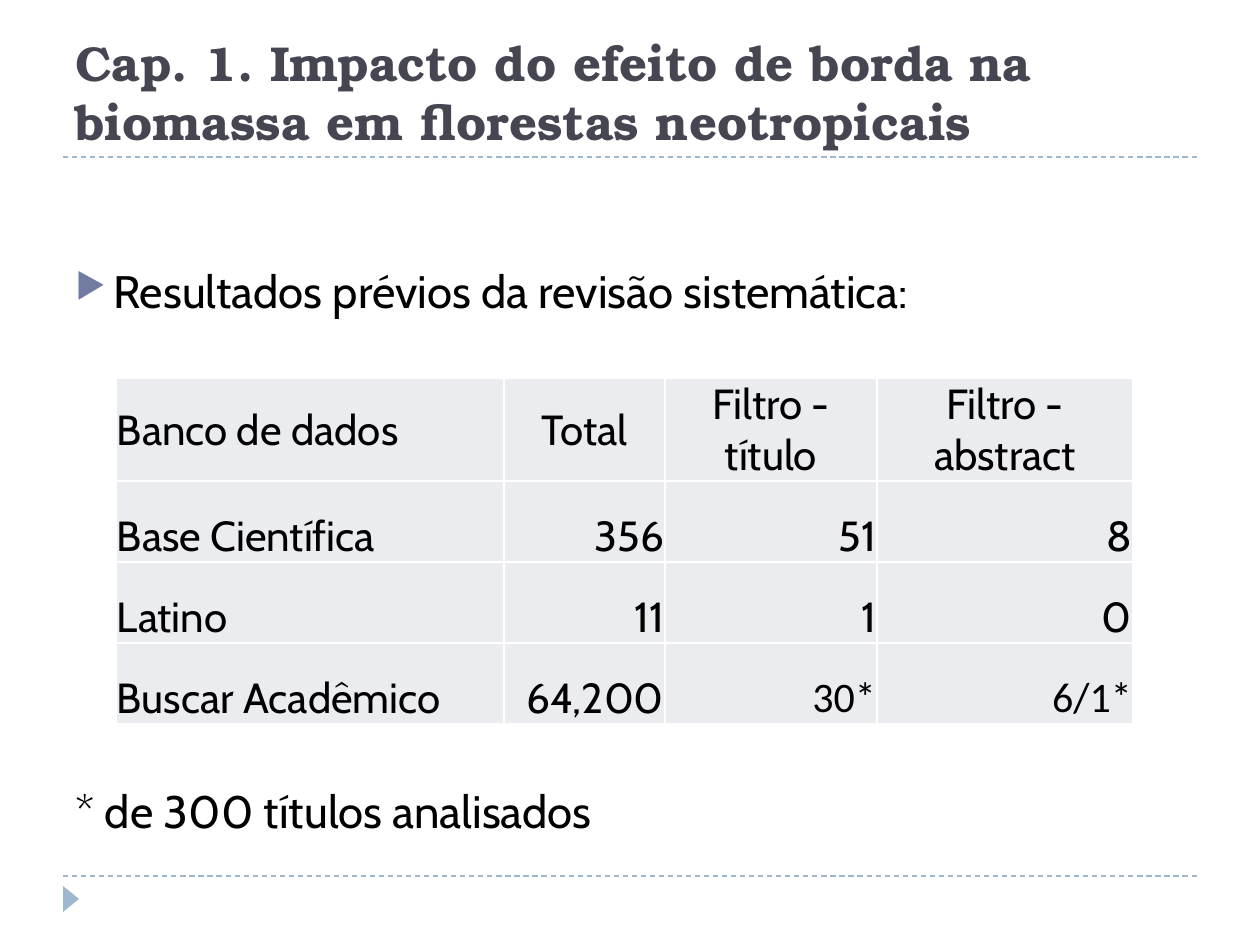
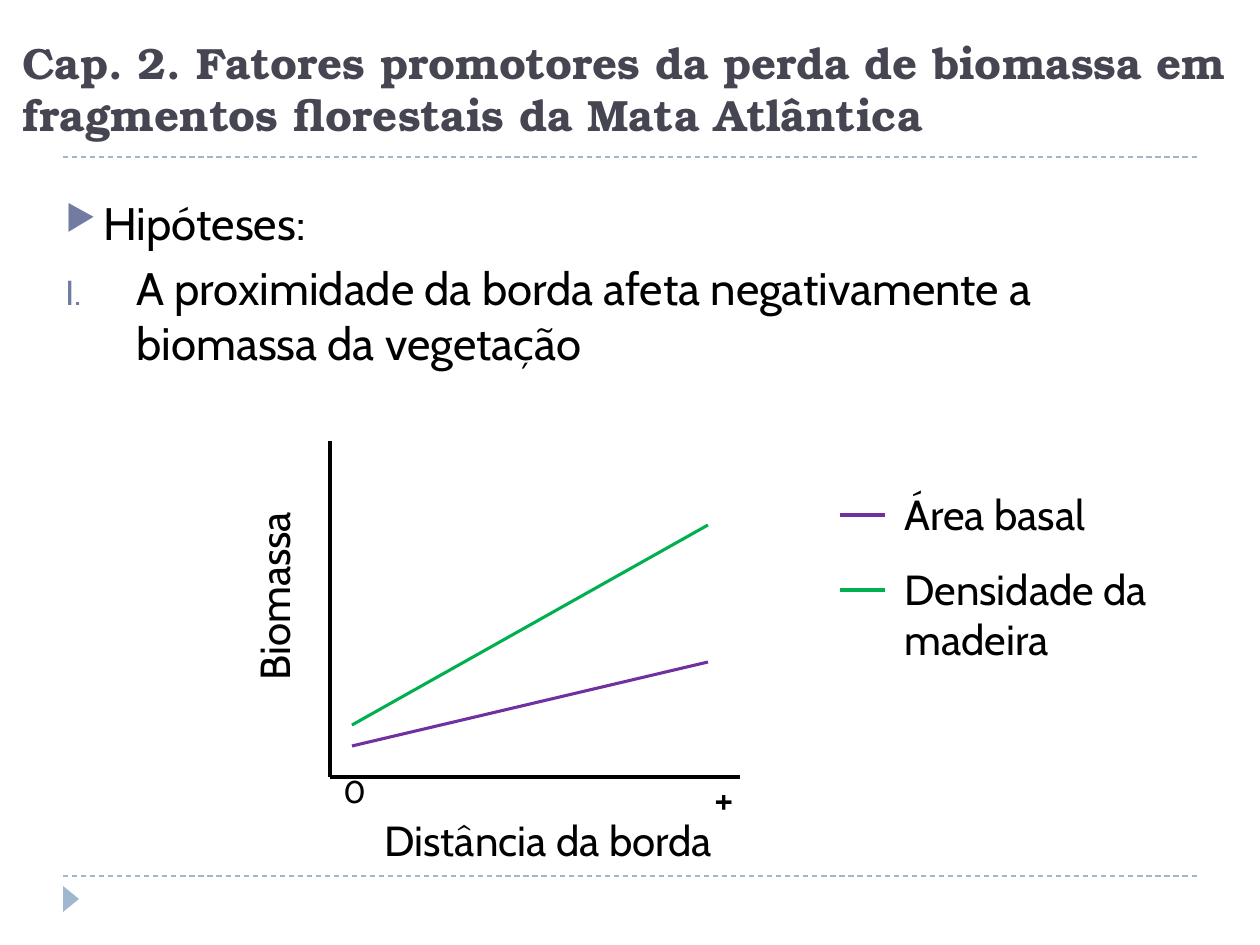
import lxml.etree
import pptx
import pptx.dml.color
import pptx.enum.dml
import pptx.enum.shapes
import pptx.enum.text
import pptx.oxml
import pptx.oxml.ns
import pptx.util

PX_PER_INCH = 126
PAGE_WIDTH, PAGE_HEIGHT = 1260, 945
TITLE_FONT, BODY_FONT, NOTE_FONT = "TeX Gyre Bonum", "Cabin", "Calibri"
INK, TITLE_INK, BULLET, RULE = "000000", "464653", "727CA3", "9FB8CD"
CELL_FILL, WHITE = "EBECF0", "FFFFFF"
GREEN, PURPLE = "00B050", "7030A0"

ALIGN = pptx.enum.text.PP_ALIGN
ANCHOR = pptx.enum.text.MSO_ANCHOR


def px(length):
    return pptx.util.Emu(round(length * 914400 / PX_PER_INCH))


def color(value):
    return pptx.dml.color.RGBColor.from_string(value)


def add_element(parent, tag, **attributes):
    element = lxml.etree.SubElement(parent, pptx.oxml.ns.qn(tag))
    for name, value in attributes.items():
        element.set(name, value)
    return element


def format_runs(para, size, font=BODY_FONT, ink=INK, bold=False):
    for span in para.runs:
        span.font.size = pptx.util.Pt(size)
        span.font.name = font
        span.font.bold = bold
        span.font.color.rgb = color(ink)


def add_line(page, start, end, ink, width=1.75, dashed=False):
    line = page.shapes.add_connector(
        pptx.enum.shapes.MSO_CONNECTOR.STRAIGHT, *map(px, start + end))
    line.line.color.rgb = color(ink)
    line.line.width = pptx.util.Pt(width)
    if dashed:
        line.line.dash_style = pptx.enum.dml.MSO_LINE.DASH
    add_element(line._element.spPr, "a:effectLst")


def add_text(page, text, left, top, width, height, size=24, rotation=0, wrap=True):
    box = page.shapes.add_textbox(px(left), px(top), px(width), px(height))
    box.rotation = rotation
    box.text_frame.word_wrap = wrap
    box.text_frame.text = text
    for para in box.text_frame.paragraphs:
        format_runs(para, size)
    return box


def set_bullet(para, indent, tag, **attributes):
    properties = para._p.get_or_add_pPr()
    properties.set("marL", str(px(indent)))
    properties.set("indent", str(-px(indent)))
    add_element(add_element(properties, "a:buClr"), "a:srgbClr", val=BULLET)
    add_element(properties, "a:buSzPct", val="76000")
    add_element(properties, tag, **attributes)


def add_body(page, text, left, top, height):
    """Body text, 26 pt, with 6 pt before each paragraph."""
    box = add_text(page, text, left, top, 1134, height, size=26)
    for para in box.text_frame.paragraphs:
        para.space_before = pptx.util.Pt(6)
    return box.text_frame.paragraphs


def set_arrow_bullet(para):
    set_bullet(para, 38, "a:buChar", char="▶")


def add_page(deck, title, left, top, width, height, size):
    """A page with its title, the two dashed rules and the corner marker."""
    page = deck.slides.add_slide(deck.slide_layouts[5])
    for rule_top in (876, 157):
        add_line(page, (63, rule_top), (1197, rule_top), RULE, 0.75, dashed=True)
    marker = page.shapes.add_shape(
        pptx.enum.shapes.MSO_SHAPE.ISOSCELES_TRIANGLE,
        px(58), px(891), px(26), px(16))
    marker.rotation = 90
    marker.shadow.inherit = False
    marker.fill.solid()
    marker.fill.fore_color.rgb = color(RULE)
    marker.line.fill.background()

    heading = page.shapes.title
    heading.left, heading.top = px(left), px(top)
    heading.width, heading.height = px(width), px(height)
    frame = heading.text_frame
    frame.text = title
    frame.word_wrap = True
    frame.auto_size = pptx.enum.text.MSO_AUTO_SIZE.NONE
    frame.vertical_anchor = ANCHOR.BOTTOM
    frame.paragraphs[0].alignment = ALIGN.LEFT
    format_runs(frame.paragraphs[0], size, TITLE_FONT, TITLE_INK, bold=True)
    return page


def format_cell(cell, text, align, anchor, font):
    cell.text = text
    cell.vertical_anchor = anchor
    cell.margin_left = cell.margin_right = cell.margin_top = px(1)
    cell.margin_bottom = 0
    para = cell.text_frame.paragraphs[0]
    para.alignment = align
    format_runs(para, 24, font)
    properties = cell._tc.get_or_add_tcPr()
    for side in ("a:lnL", "a:lnR", "a:lnT", "a:lnB"):
        border = add_element(properties, side, w="12700")
        add_element(add_element(border, "a:solidFill"), "a:srgbClr", val=WHITE)
    cell.fill.solid()
    cell.fill.fore_color.rgb = color(CELL_FILL)


def add_results_table(page, rows, left, top, widths, heights):
    frame = page.shapes.add_table(
        len(rows), len(widths), px(left), px(top), px(sum(widths)), px(sum(heights)))
    table = frame.table
    for column, width in zip(table.columns, widths):
        column.width = px(width)
    for row_index, (row, height) in enumerate(zip(rows, heights)):
        table.rows[row_index].height = px(height)
        header = row_index == 0
        anchor = ANCHOR.MIDDLE if header else ANCHOR.BOTTOM
        for column_index, text in enumerate(row):
            if column_index == 0:
                align = ALIGN.LEFT
            else:
                align = ALIGN.CENTER if header else ALIGN.RIGHT
            font = NOTE_FONT if text.endswith("*") else BODY_FONT
            format_cell(table.cell(row_index, column_index), text, align, anchor, font)


def build_review_page(deck):
    page = add_page(
        deck, "Cap. 1. Impacto do efeito de borda na biomassa em florestas neotropicais",
        63, 21, 1134, 136, 28)
    set_arrow_bullet(
        add_body(page, "Resultados prévios da revisão sistemática:", 63, 257, 70)[0])
    add_results_table(page, [
        ("Banco de dados", "Total", "Filtro - título", "Filtro - abstract"),
        ("Base Científica", "356", "51", "8"),
        ("Latino", "11", "1", "0"),
        ("Buscar Acadêmico", "64,200", "30*", "6/1*"),
    ], 116, 378, (388, 161, 212, 256), (103, 81, 81, 81))
    add_body(page, "* de 300 títulos analisados", 63, 777, 70)


def build_hypothesis_page(deck):
    page = add_page(
        deck, "Cap. 2. Fatores promotores da perda de biomassa em fragmentos "
        "florestais da Mata Atlântica", 10, 0, 1302, 147, 25)
    hypotheses = add_body(
        page, "Hipóteses:\nA proximidade da borda afeta negativamente a "
        "biomassa da vegetação", 53, 189, 189)
    set_arrow_bullet(hypotheses[0])
    set_bullet(hypotheses[1], 71, "a:buAutoNum", type="romanUcPeriod")

    # Axes and their labels
    origin = (330, 777)
    add_line(page, origin, (740, 777), INK)
    add_line(page, (330, 441), origin, INK)
    add_text(page, "Distância da borda", 372, 808, 388, 63)
    add_text(page, "Biomassa", 158, 546, 231, 63, rotation=270)
    add_text(page, "0", 331, 766, 42, 50, size=18, wrap=False)
    add_text(page, "+", 702, 766, 50, 63, wrap=False)

    # Trend lines with their legend entries
    trends = [
        ("Área basal", PURPLE, 746, 662, 515, 63),
        ("Densidade da madeira", GREEN, 725, 525, 590, 115),
    ]
    for name, ink, start, end, key, height in trends:
        add_line(page, (352, start), (708, end), ink)
        add_line(page, (840, key), (885, key), ink)
        add_text(page, name, 892, key - 33, 325, height)


def main():
    deck = pptx.Presentation()
    deck.slide_width, deck.slide_height = px(PAGE_WIDTH), px(PAGE_HEIGHT)
    build_review_page(deck)
    build_hypothesis_page(deck)
    deck.save("out.pptx")


if __name__ == "__main__":
    main()
